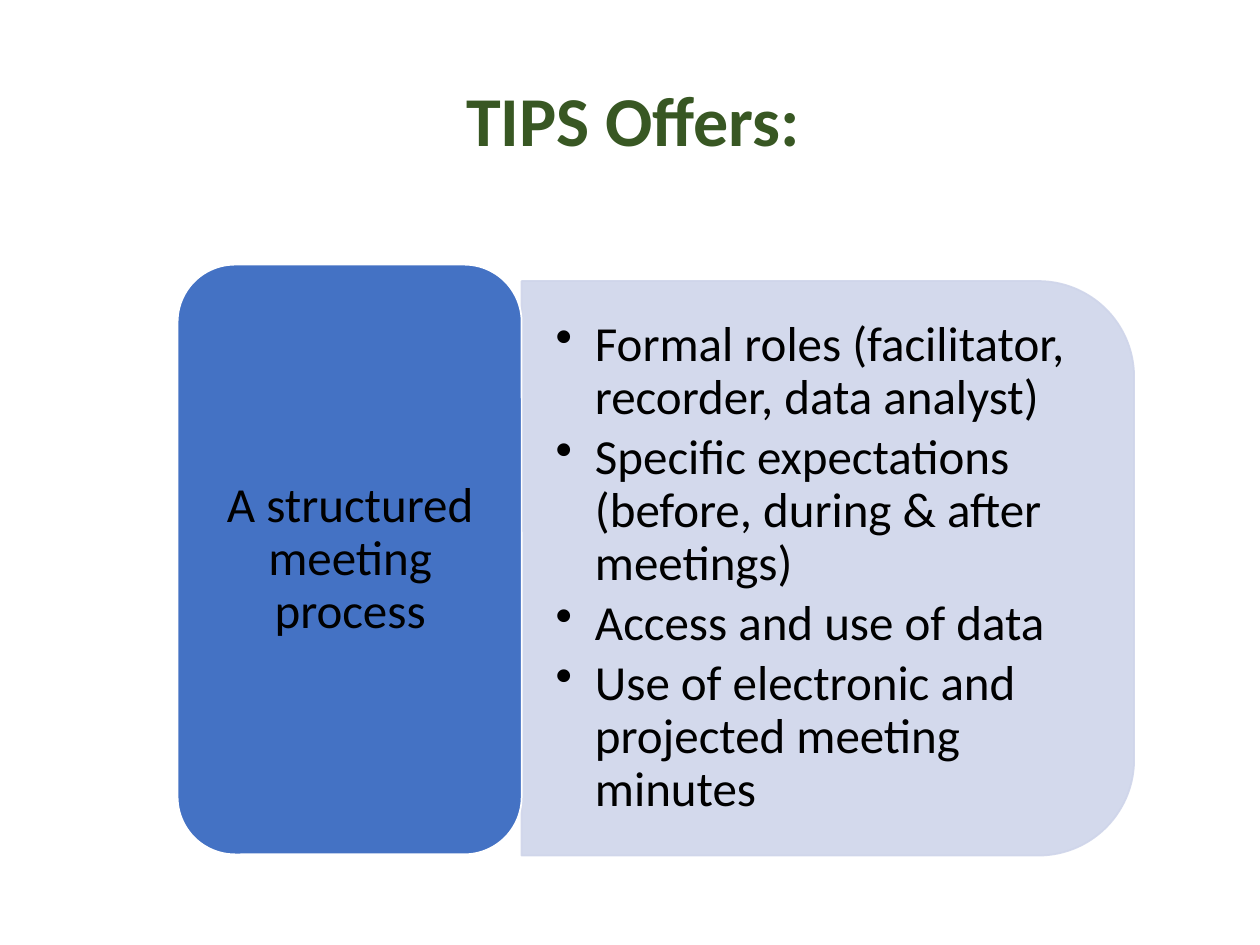
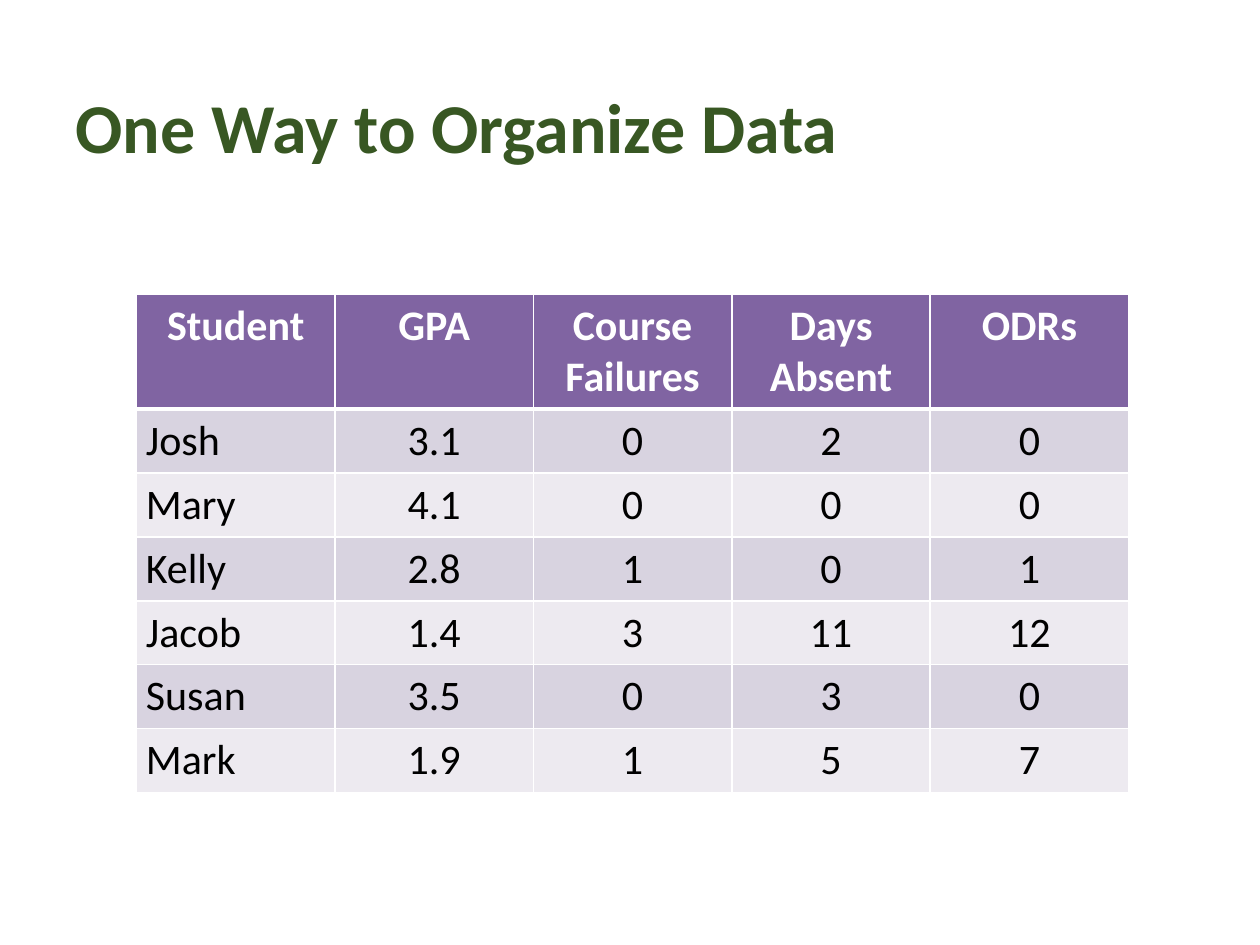
from lxml import etree
from pptx import Presentation
from pptx.dml.color import RGBColor
from pptx.enum.shapes import MSO_SHAPE as Shape
from pptx.enum.text import MSO_ANCHOR as Anchor, MSO_AUTO_SIZE as Auto, PP_ALIGN as Align
from pptx.oxml.ns import qn
from pptx.util import Pt

GREEN = RGBColor(0x38, 0x57, 0x23)
BLUE = RGBColor(0x44, 0x72, 0xC4)
PALE = RGBColor(0xCF, 0xD5, 0xEA)
PURPLE = RGBColor(0x80, 0x64, 0xA2)
LILAC = RGBColor(0xD8, 0xD3, 0xE0)
MIST = RGBColor(0xED, 0xEA, 0xF0)
BLACK = RGBColor(0, 0, 0)
WHITE = RGBColor(255, 255, 255)

FACE = "Calibri"
OFFERS = [
    "Formal roles (facilitator, recorder, data analyst)",
    "Specific expectations (before, during & after meetings)",
    "Access and use of data",
    "Use of electronic and projected meeting minutes",
]
GRADES = [
    ("Student", "GPA", "Course Failures", "Days Absent", "ODRs"),
    ("Josh", "3.1", "0", "2", "0"),
    ("Mary", "4.1", "0", "0", "0"),
    ("Kelly", "2.8", "1", "0", "1"),
    ("Jacob", "1.4", "3", "11", "12"),
    ("Susan", "3.5", "0", "3", "0"),
    ("Mark", "1.9", "1", "5", "7"),
]


def apply(item, form):
    """Set each attribute of item named in the dict form."""
    for name, value in form.items():
        setattr(item, name, value)


def write(para, text, size, color, bold=False, **form):
    """Put one formatted run in a paragraph."""
    run = para.add_run()
    run.text = text
    apply(run.font, {"name": FACE, "size": Pt(size), "bold": bold})
    run.font.color.rgb = color
    apply(para, form)


def add_title(deck, text, box, align):
    """Add a title-only slide and place its title."""
    slide = deck.slides.add_slide(deck.slide_layouts[5])
    title = slide.shapes.title
    apply(title, dict(zip(("left", "top", "width", "height"), map(Pt, box))))
    frame = title.text_frame
    apply(frame, {"auto_size": Auto.NONE, "word_wrap": True,
                  "vertical_anchor": Anchor.MIDDLE})
    write(frame.paragraphs[0], text, 40, GREEN, True,
          alignment=align, line_spacing=0.9)
    return slide


def add_panel(slide, kind, box, fill, line, turn=0, alpha=None):
    """Add a filled, outlined shape, turned and see-through if asked."""
    panel = slide.shapes.add_shape(kind, *map(Pt, box))
    panel.shadow.inherit = False
    panel.rotation = turn
    panel.fill.solid()
    panel.fill.fore_color.rgb = fill
    panel.line.color.rgb = line
    panel.line.width = Pt(1)
    if alpha:
        for tint in panel.element.spPr.iter(qn("a:srgbClr")):
            etree.SubElement(tint, qn("a:alpha"), val=str(alpha * 1000))


def add_bullet(para, indent):
    """Give a paragraph a round bullet with a hanging indent."""
    props = para._p.get_or_add_pPr()
    props.set("marL", str(Pt(indent)))
    props.set("indent", str(-Pt(indent)))
    etree.SubElement(props, qn("a:buChar"), char="•")


def add_text(slide, box, lines, pad, bullet=False):
    """Add a centred-in-height text box of one paragraph per line."""
    frame = slide.shapes.add_textbox(*map(Pt, box)).text_frame
    side, edge = map(Pt, pad)
    apply(frame, {"word_wrap": True, "vertical_anchor": Anchor.MIDDLE,
                  "margin_left": side, "margin_right": side,
                  "margin_top": edge, "margin_bottom": edge})
    for num, line in enumerate(lines):
        para = frame.add_paragraph() if num else frame.paragraphs[0]
        if bullet:
            add_bullet(para, 22.5)
        write(para, line, 28, BLACK, line_spacing=0.9, space_after=Pt(4.2),
              alignment=Align.LEFT if bullet else Align.CENTER)


def add_rules(cell, widths):
    """Draw white cell borders from a dict of side and width."""
    props = cell._tc.get_or_add_tcPr()
    for side, width in widths.items():
        rule = etree.SubElement(props, qn("a:ln" + side), w=str(Pt(width)))
        fill = etree.SubElement(rule, qn("a:solidFill"))
        etree.SubElement(fill, qn("a:srgbClr"), val=str(WHITE))


def add_grid(slide, box, data, heights):
    """Add a banded table with a header row."""
    grid = slide.shapes.add_table(len(data), len(data[0]), *map(Pt, box)).table
    for row, texts in enumerate(data):
        head = row == 0
        grid.rows[row].height = Pt(heights[0] if head else heights[1])
        for col, text in enumerate(texts):
            cell = grid.cell(row, col)
            add_rules(cell, {"L": 1, "R": 1, "T": 3 if row == 1 else 1,
                             "B": 3 if head else 1})
            cell.fill.solid()
            cell.fill.fore_color.rgb = PURPLE if head else (MIST, LILAC)[row % 2]
            apply(cell, {"margin_left": Pt(5.4), "margin_right": Pt(5.4)})
            write(cell.text_frame.paragraphs[0], text, 24,
                  WHITE if head else BLACK, head,
                  alignment=Align.CENTER if head or col else Align.LEFT)


def main():
    """Build both slides and save the deck."""
    deck = Presentation()
    apply(deck, {"slide_width": Pt(720), "slide_height": Pt(540)})

    slide = add_title(deck, "TIPS Offers:", (118.8, 53.3, 486, 34.6), Align.CENTER)
    add_panel(slide, Shape.ROUND_2_SAME_RECTANGLE, (308.9, 149.8, 328.3, 350),
              PALE, PALE, 90, 90)
    add_text(slide, (298, 176.4, 333.4, 296.6), OFFERS, (19.5, 9.75), True)
    add_panel(slide, Shape.ROUNDED_RECTANGLE, (101.5, 151.2, 196.6, 337), BLUE, WHITE)
    add_text(slide, (111.6, 160.6, 177, 318.2), ["A structured meeting process"],
             (8.4, 4.2))

    slide = add_title(deck, "One Way to Organize Data", (36, 30, 648, 90), Align.LEFT)
    add_grid(slide, (78, 168, 567, 280.8), GRADES, (64.8, 36))

    deck.save("out.pptx")


if __name__ == "__main__":
    main()
